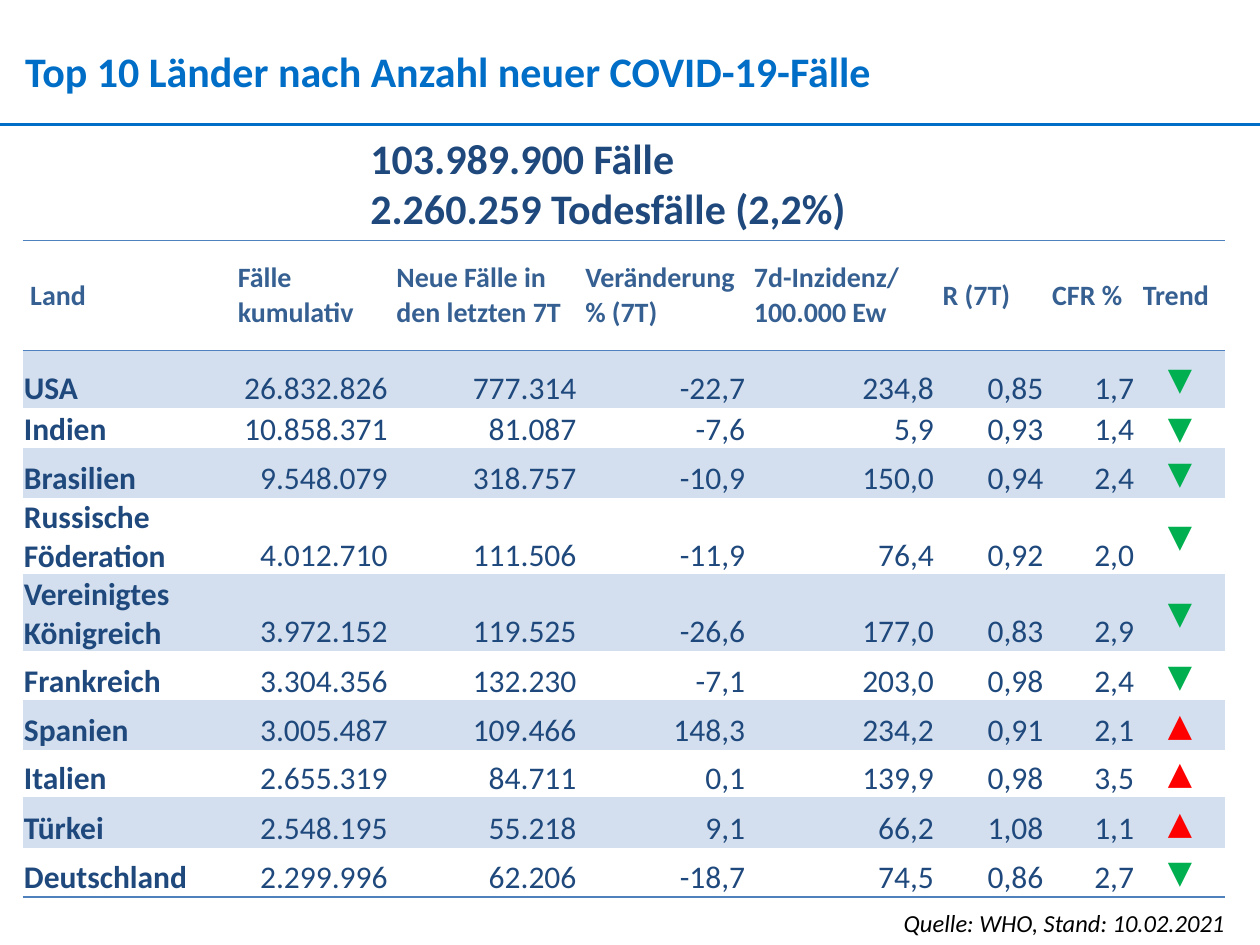
from lxml import etree
from pptx import Presentation
from pptx import util as u
from pptx.dml.color import RGBColor
from pptx.enum import shapes, text
from pptx.oxml import ns

BLUE = RGBColor(0x00, 0x6E, 0xC7)
NAVY = RGBColor(0x1F, 0x49, 0x7D)
HEADER_BLUE = RGBColor(0x36, 0x60, 0x92)
RULE_BLUE = RGBColor(0x4F, 0x81, 0xBD)
BAND = RGBColor(0xD3, 0xDF, 0xEE)
GREEN = RGBColor(0x00, 0xB0, 0x50)
RED = RGBColor(0xFF, 0x00, 0x00)
BLACK = RGBColor(0x00, 0x00, 0x00)

FONT = "Calibri"
WIDTH, HEIGHT = u.Inches(10), u.Inches(7.5)
LEFT, CENTER, RIGHT = text.PP_ALIGN.LEFT, text.PP_ALIGN.CENTER, text.PP_ALIGN.RIGHT
MIDDLE, BOTTOM = text.MSO_ANCHOR.MIDDLE, text.MSO_ANCHOR.BOTTOM

COLUMN_WEIGHTS = [1.65, 1.26, 1.5, 1.34, 1.5, 0.87, 0.72, 0.71]
ROW_WEIGHTS = [0.87, 0.46, 0.32, 0.39, 0.39, 0.39, 0.39, 0.39, 0.38, 0.4, 0.39]
HEADERS = ["Land", "Fälle kumulativ", "Neue Fälle in den letzten 7T", "Veränderung % (7T)",
           "7d-Inzidenz/ 100.000 Ew", "R (7T)", "CFR %", "Trend"]
COUNTRIES = [
    ["USA", "26.832.826", "777.314", "-22,7", "234,8", "0,85", "1,7", "▼"],
    ["Indien", "10.858.371", "81.087", "-7,6", "5,9", "0,93", "1,4", "▼"],
    ["Brasilien", "9.548.079", "318.757", "-10,9", "150,0", "0,94", "2,4", "▼"],
    ["Russische Föderation", "4.012.710", "111.506", "-11,9", "76,4", "0,92", "2,0", "▼"],
    ["Vereinigtes Königreich", "3.972.152", "119.525", "-26,6", "177,0", "0,83", "2,9", "▼"],
    ["Frankreich", "3.304.356", "132.230", "-7,1", "203,0", "0,98", "2,4", "▼"],
    ["Spanien", "3.005.487", "109.466", "148,3", "234,2", "0,91", "2,1", "▲"],
    ["Italien", "2.655.319", "84.711", "0,1", "139,9", "0,98", "3,5", "▲"],
    ["Türkei", "2.548.195", "55.218", "9,1", "66,2", "1,08", "1,1", "▲"],
    ["Deutschland", "2.299.996", "62.206", "-18,7", "74,5", "0,86", "2,7", "▼"],
]


def share_box(left, top, width, height):
    """Turn percentages of the slide into a box of lengths."""
    return (int(WIDTH * left / 100), int(HEIGHT * top / 100),
            int(WIDTH * width / 100), int(HEIGHT * height / 100))


def format_text(frame, size, color, bold=False, italic=False, align=LEFT):
    """Give every run of a text frame the same look."""
    for paragraph in frame.paragraphs:
        paragraph.alignment = align
        for run in paragraph.runs:
            font = run.font
            font.name, font.size, font.color.rgb = FONT, u.Pt(size), color
            font.bold, font.italic = bold, italic


def set_margins(target, left, top, right, bottom):
    """Set the inner margins of a text frame or cell in inches."""
    target.margin_left, target.margin_top = u.Inches(left), u.Inches(top)
    target.margin_right, target.margin_bottom = u.Inches(right), u.Inches(bottom)


def add_text(slide, box, wording, size, color, wrap=True, **look):
    """Place a text box that grows with its wording."""
    frame = slide.shapes.add_textbox(*box).text_frame
    frame.text = wording
    frame.word_wrap = wrap
    frame.auto_size = text.MSO_AUTO_SIZE.SHAPE_TO_FIT_TEXT
    format_text(frame, size, color, **look)
    return frame


def add_heading(slide, box):
    """Place the title with the full-width rule at the foot of the box."""
    left, top, width, height = box
    title_box = (left + width // 50, top + height * 4 // 11, width * 96 // 100, height * 2 // 5)
    frame = add_text(slide, title_box, "Top 10 Länder nach Anzahl neuer COVID-19-Fälle",
                     24, BLUE, bold=True)
    set_margins(frame, 0, 0, 0, 0)
    rule = slide.shapes.add_connector(shapes.MSO_CONNECTOR.STRAIGHT,
                                      left, top + height, left + width, top + height)
    rule.line.color.rgb, rule.line.width = BLUE, u.Pt(1.5)
    etree.SubElement(rule._element.spPr, ns.qn("a:effectLst"))


def set_borders(cell, ruled_sides):
    """Draw a thin rule on the given sides of a cell and clear the others."""
    properties = cell._tc.get_or_add_tcPr()
    for side in "LRTB":
        line = etree.SubElement(properties, ns.qn(f"a:ln{side}"), w=str(u.Pt(1)))
        if side in ruled_sides:
            fill = etree.SubElement(line, ns.qn("a:solidFill"))
            etree.SubElement(fill, ns.qn("a:srgbClr"), val=str(RULE_BLUE))
        else:
            etree.SubElement(line, ns.qn("a:noFill"))


def fill_header_cell(cell, wording):
    """Write one column heading."""
    cell.text_frame.text = wording
    cell.vertical_anchor = MIDDLE
    set_margins(cell, 0.06, 0, 0.06, 0)
    set_borders(cell, "TB")
    cell.fill.background()
    format_text(cell.text_frame, 16, HEADER_BLUE, bold=True)


def fill_country_cell(cell, wording, row, column):
    """Write one country name, figure or trend mark."""
    is_name, is_trend = column == 0, column == len(HEADERS) - 1
    color, align = NAVY, LEFT if is_name else RIGHT
    if is_trend:
        color, align = GREEN if wording == "▼" else RED, CENTER
    cell.text_frame.text = wording
    cell.vertical_anchor = MIDDLE if is_trend else BOTTOM
    set_margins(cell, 0.01, 0.01, 0.01, 0)
    set_borders(cell, {1: "T", len(COUNTRIES): "B"}.get(row, ""))
    if row % 2:
        cell.fill.solid()
        cell.fill.fore_color.rgb = BAND
    else:
        cell.fill.background()
    format_text(cell.text_frame, 18, color, bold=is_name, align=align)


def add_country_table(slide, box):
    """Place the ranking table, sharing the box out by weights."""
    width, height = box[2:]
    table = slide.shapes.add_table(len(ROW_WEIGHTS), len(COLUMN_WEIGHTS), *box).table
    table.first_row = table.horz_banding = False
    for column, weight in zip(table.columns, COLUMN_WEIGHTS):
        column.width = int(width * weight / sum(COLUMN_WEIGHTS))
    for row, weight in zip(table.rows, ROW_WEIGHTS):
        row.height = int(height * weight / sum(ROW_WEIGHTS))
    for column, wording in enumerate(HEADERS):
        fill_header_cell(table.cell(0, column), wording)
    for row, country in enumerate(COUNTRIES, 1):
        for column, wording in enumerate(country):
            fill_country_cell(table.cell(row, column), wording, row, column)


def main():
    """Build the slide and save it."""
    presentation = Presentation()
    presentation.slide_width, presentation.slide_height = WIDTH, HEIGHT
    slide = presentation.slides.add_slide(presentation.slide_layouts[6])
    add_heading(slide, share_box(0, 0, 100, 13.2))
    add_text(slide, share_box(28.4, 13.33, 40.8, 12.13),
             "103.989.900 Fälle\n2.260.259 Todesfälle (2,2%)", 24, NAVY, wrap=False, bold=True)
    add_text(slide, share_box(62.8, 95.47, 35.4, 4.53), "Quelle: WHO, Stand: 10.02.2021",
             14, BLACK, italic=True, align=RIGHT)
    add_country_table(slide, share_box(1.8, 25.47, 95.4, 63.6))
    presentation.save("out.pptx")


if __name__ == "__main__":
    main()
